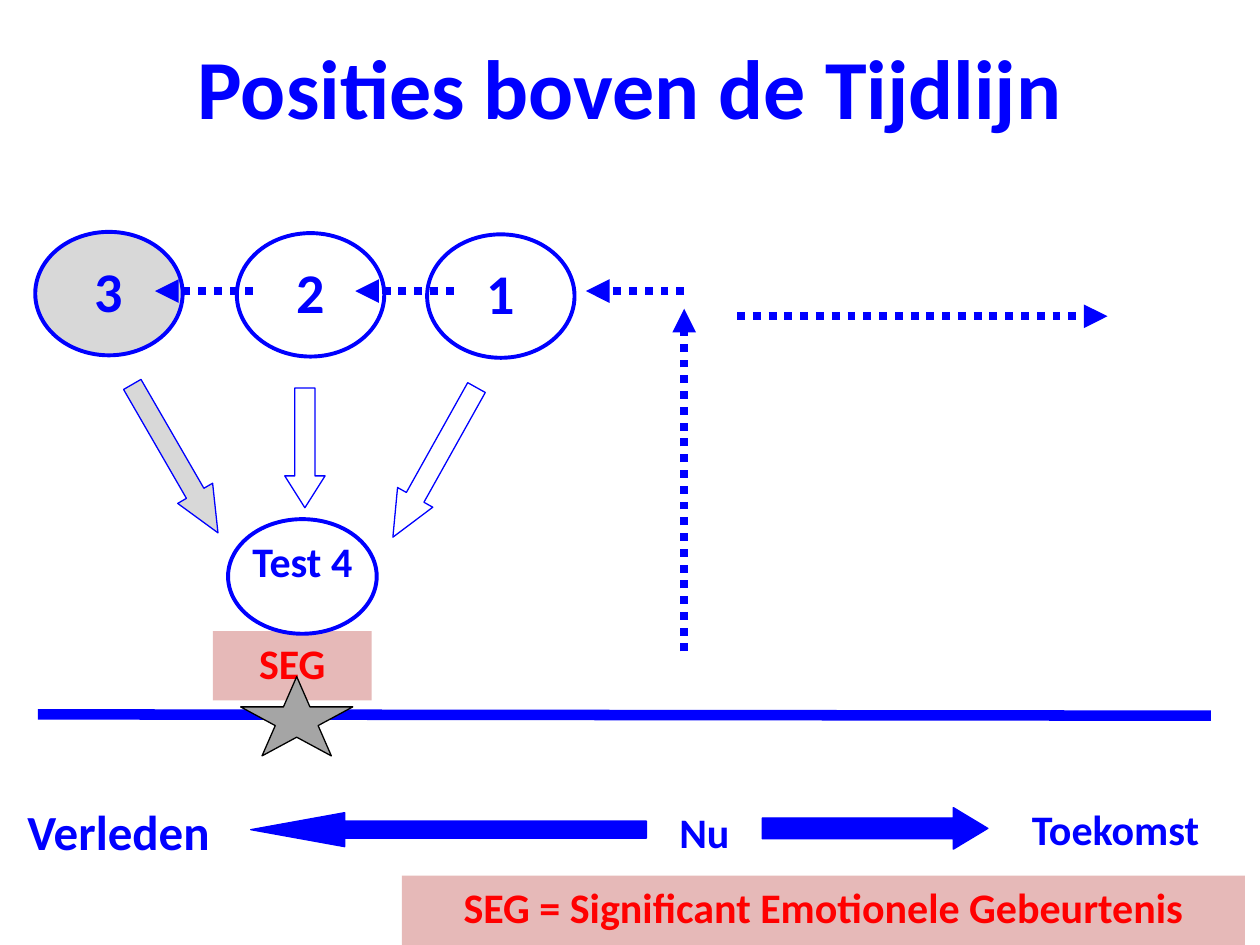
from dataclasses import dataclass

from lxml import etree
from pptx import Presentation, util as u
from pptx.dml.color import RGBColor
from pptx.enum import dml, shapes, text
from pptx.oxml.ns import qn


@dataclass(frozen=True)
class Theme:
    font: str = "Calibri"
    blue: str = "0000FF"
    red: str = "FF0000"
    pink: str = "E6B9B8"
    white: str = "FFFFFF"
    pale: str = "D8D8D8"
    grey: str = "A5A5A5"
    black: str = "000000"
    title: int = 48
    number: int = 32
    large: int = 28
    body: int = 24
    thin: float = 0.75
    outline: float = 2.25
    dotted: float = 4.5
    axis: float = 6


T = Theme()
KIND = shapes.MSO_SHAPE
CENTER, LEFT = text.PP_ALIGN.CENTER, text.PP_ALIGN.LEFT

TITLE = "Posities boven de Tijdlijn"
CIRCLE_SIZE = (1.17, 0.98)
# label, left, top, fill
POSITIONS = [
    ("3", 0.28, 1.84, T.pale),
    ("2", 1.88, 1.85, T.white),
    ("1", 3.39, 1.86, T.white),
]
TEST = ("Test 4", (1.81, 4.12, 1.18, 0.91))
EVENT = ("SEG", (1.69, 5.01, 1.26, 0.55))
LEGEND = ("SEG = Significant Emotionele Gebeurtenis", (3.19, 6.95, 6.69, 0.55))
STAR = (1.91, 5.37, 0.89, 0.63)
# label, place, size, alignment, has inner margins
PERIODS = [
    ("Verleden", (0, 6.31, 1.88, 0.5), T.large, CENTER, True),
    ("Nu", (5.13, 6.4, 0.92, 0.41), T.body, CENTER, False),
    ("Toekomst", (8.09, 6.33, 1.71, 0.49), T.body, LEFT, True),
]
# kind, place, head length, fill, rotation
BLOCK_ARROWS = [
    (KIND.RIGHT_ARROW, (6.05, 6.41, 1.79, 0.33), 0.83, T.blue, 0),
    (KIND.LEFT_ARROW, (1.99, 6.45, 3.14, 0.27), 2.76, T.blue, 0),
    (KIND.DOWN_ARROW, (1.23, 2.96, 0.32, 1.36), 1.13, T.pale, 330),
    (KIND.DOWN_ARROW, (3.29, 2.99, 0.32, 1.36), 1.13, T.white, 29.2),
    (KIND.DOWN_ARROW, (2.26, 3.08, 0.32, 0.95), 0.79, T.white, 0),
]
TIMELINE = (0.3, 5.67, 9.61, 5.68)
STEP_Y, STEP_LENGTH = 2.31, 0.78
RISE = (5.43, 5.17, 5.43, 2.45)
STEPS = [(x, STEP_Y, x - STEP_LENGTH, STEP_Y) for x in (5.43, 3.6, 2.01)]
FORWARD = (5.85, 2.51, 8.79, 2.51)


def rgb(color):
    return RGBColor.from_string(color)


def write(frame, words, size, color, align=CENTER):
    para = frame.paragraphs[0]
    para.alignment = align
    span = para.add_run()
    span.text = words
    span.font.name, span.font.size, span.font.bold = T.font, u.Pt(size), True
    span.font.color.rgb = rgb(color)
    return para


def add_shape(page, kind, place, fill, line=None, width=T.thin):
    shape = page.shapes.add_shape(kind, *map(u.Inches, place))
    shape.shadow.inherit = False
    shape.fill.solid()
    shape.fill.fore_color.rgb = rgb(fill)
    if line:
        shape.line.color.rgb = rgb(line)
        shape.line.width = u.Pt(width)
    else:
        shape.line.fill.background()
    return shape


def label(shape, words, size, color=T.blue, align=CENTER, margins=True):
    frame = shape.text_frame
    frame.word_wrap = True
    frame.vertical_anchor = text.MSO_ANCHOR.TOP
    if not margins:
        frame.margin_left = frame.margin_right = 0
        frame.margin_top = frame.margin_bottom = 0
    write(frame, words, size, color, align).space_after = u.Pt(10)


def add_line(page, ends, width, dotted_arrow=False):
    line = page.shapes.add_connector(
        shapes.MSO_CONNECTOR.STRAIGHT, *map(u.Inches, ends))
    line.line.color.rgb = rgb(T.blue)
    line.line.width = u.Pt(width)
    if dotted_arrow:
        line.line.dash_style = dml.MSO_LINE.ROUND_DOT
        etree.SubElement(line.line._get_or_add_ln(), qn("a:tailEnd"),
                         type="triangle")
    etree.SubElement(line._element.spPr, qn("a:effectLst"))


def add_title(page):
    title = page.shapes.title
    title.left, title.top, title.width, title.height = map(
        u.Inches, (0.5, 0.3, 9, 0.77))
    title.text_frame.vertical_anchor = text.MSO_ANCHOR.MIDDLE
    write(title.text_frame, TITLE, T.title, T.blue)


def add_event(page, words, place):
    label(add_shape(page, KIND.RECTANGLE, place, T.pink), words, T.body, T.red)


def add_circles(page):
    for number, left, top, fill in POSITIONS:
        circle = add_shape(page, KIND.OVAL, (left, top, *CIRCLE_SIZE), fill,
                           T.blue, T.outline)
        label(circle, number, T.number)
    words, place = TEST
    test = add_shape(page, KIND.OVAL, place, T.white, T.blue, T.outline)
    label(test, words, T.body, margins=False)


def add_timeline(page):
    add_line(page, TIMELINE, T.axis)
    add_shape(page, KIND.STAR_5_POINT, STAR, T.grey, T.black)
    for words, place, size, align, margins in PERIODS:
        box = add_shape(page, KIND.RECTANGLE, place, T.white)
        label(box, words, size, align=align, margins=margins)


def add_arrows(page):
    for kind, place, head, fill, rotation in BLOCK_ARROWS:
        arrow = add_shape(page, kind, place, fill, T.blue)
        arrow.adjustments[0], arrow.adjustments[1] = 0.5, head
        arrow.rotation = rotation
    for ends in (RISE, *STEPS, FORWARD):
        add_line(page, ends, T.dotted, dotted_arrow=True)


def main():
    deck = Presentation()
    deck.slide_width, deck.slide_height = u.Inches(10), u.Inches(7.5)
    page = deck.slides.add_slide(deck.slide_layouts.get_by_name("Title Only"))
    add_title(page)
    add_event(page, *EVENT)
    add_circles(page)
    add_timeline(page)
    add_arrows(page)
    add_event(page, *LEGEND)
    deck.save("out.pptx")


if __name__ == "__main__":
    main()
